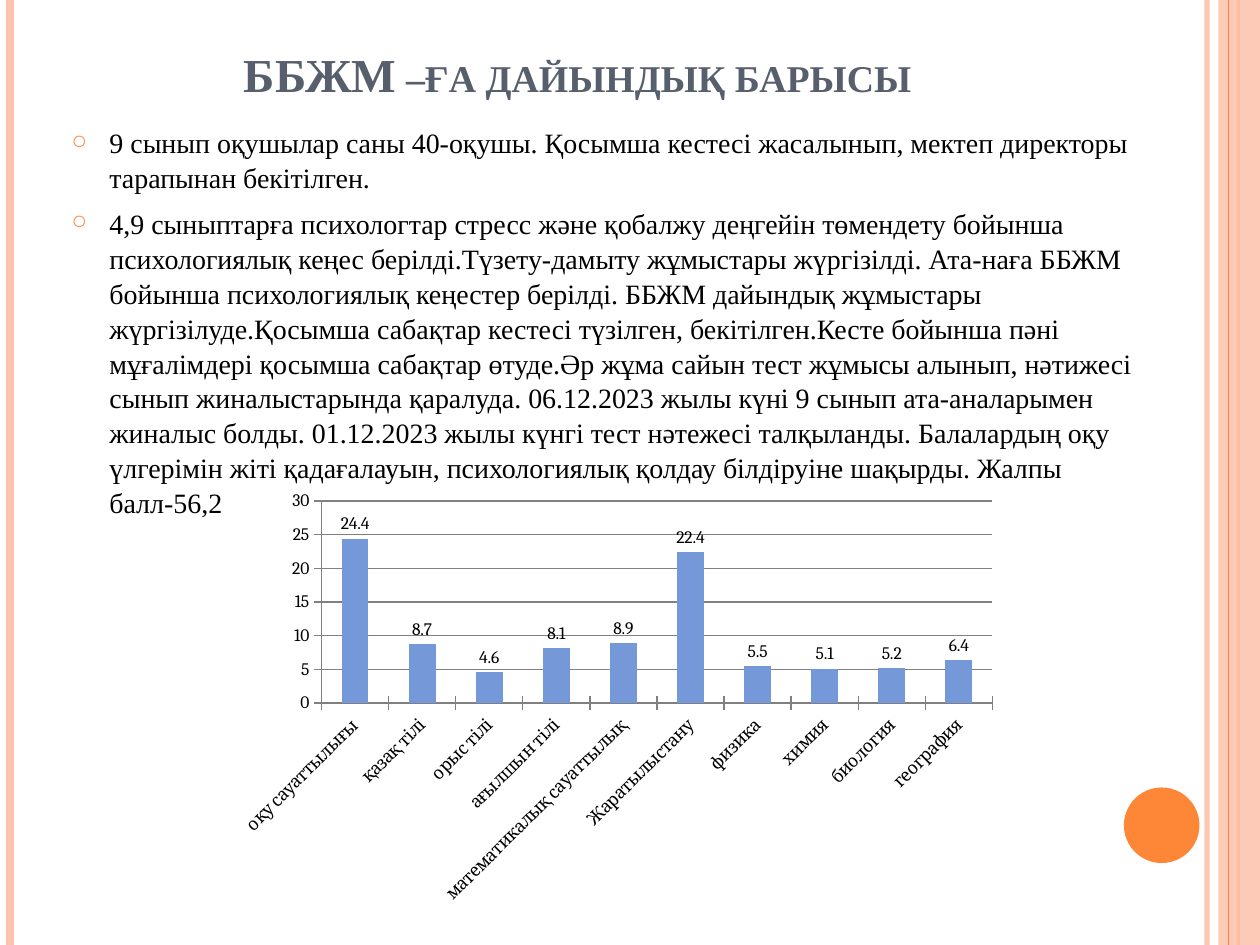
from lxml import etree
from pptx import Presentation
from pptx.chart.data import CategoryChartData
from pptx.dml.color import RGBColor
from pptx.enum import chart as charts, shapes, text
from pptx.oxml.ns import qn
from pptx.util import Inches, Pt

ORANGE, PEACH, SLATE = "FE8637", "FEC3AE", "575F6D"
BLUE, GREY, BLACK = "7598D9", "808080", "000000"
SERIF, CHART_FONT = "Times New Roman", "Cambria"

TITLE = "ББЖМ –ға дайындық барысы"
BULLETS = [
    "9 сынып оқушылар саны 40-оқушы. Қосымша кестесі жасалынып, мектеп директоры "
    "тарапынан бекітілген.",
    "4,9 сыныптарға психологтар стресс және қобалжу деңгейін төмендету бойынша "
    "психологиялық кеңес берілді.Түзету-дамыту жұмыстары жүргізілді. Ата-наға ББЖМ "
    "бойынша психологиялық кеңестер берілді. ББЖМ дайындық жұмыстары "
    "жүргізілуде.Қосымша сабақтар кестесі түзілген, бекітілген.Кесте бойынша пәні "
    "мұғалімдері қосымша сабақтар өтуде.Әр жұма сайын тест жұмысы алынып, нәтижесі "
    "сынып жиналыстарында қаралуда. 06.12.2023 жылы күні 9 сынып ата-аналарымен "
    "жиналыс болды. 01.12.2023 жылы күнгі тест нәтежесі талқыланды. Балалардың оқу "
    "үлгерімін жіті қадағалауын, психологиялық қолдау білдіруіне шақырды. Жалпы "
    "балл-56,2",
]
SCORES = {
    "оқу сауаттылығы": 24.4, "қазақ тілі": 8.7, "орыс тілі": 4.6,
    "ағылшын тілі": 8.1, "математикалық сауаттылық": 8.9, "Жаратылыстану": 22.4,
    "физика": 5.5, "химия": 5.1, "биология": 5.2, "география": 6.4,
}
# Vertical stripes: x, colour, width in points, opacity in percent
BACK_STRIPES = [(9.58, PEACH, 3, 93), (0.08, PEACH, 4.5, 100), (9.83, ORANGE, 1.5, 100)]
FRONT_STRIPES = [(9.75, ORANGE, 0.75, 100)]


def color(value):
    return RGBColor.from_string(value)


def set_opacity(fill_parent, percent):
    color_element = fill_parent.find(".//" + qn("a:srgbClr"))
    etree.SubElement(color_element, qn("a:alpha"), val=str(percent * 1000))


def add_stripes(slide, stripes):
    for x, stripe_color, width, opacity in stripes:
        line = slide.shapes.add_connector(
            shapes.MSO_CONNECTOR.STRAIGHT, Inches(x), 0, Inches(x), Inches(7.5))
        line.line.color.rgb = color(stripe_color)
        line.line.width = Pt(width)
        if opacity < 100:
            set_opacity(line.line._ln, opacity)
        etree.SubElement(line._element.spPr, qn("a:effectLst"))


def add_filled_shape(slide, kind, box, fill):
    shape = slide.shapes.add_shape(kind, *map(Inches, box))
    shape.shadow.inherit = False
    shape.fill.solid()
    shape.fill.fore_color.rgb = color(fill)
    shape.line.fill.background()
    return shape


def add_text_frame(slide, box):
    frame = slide.shapes.add_textbox(*map(Inches, box)).text_frame
    frame.word_wrap = True
    return frame


def add_run(paragraph, words, size, font_color):
    run = paragraph.add_run()
    run.text = words
    run.font.name = SERIF
    run.font.size = Pt(size)
    run.font.color.rgb = color(font_color)
    return run


def add_bullet(paragraph):
    properties = paragraph._p.get_or_add_pPr()
    properties.set("marL", str(Inches(0.3)))
    properties.set("indent", str(-Inches(0.3)))
    bullet_color = etree.SubElement(properties, qn("a:buClr"))
    etree.SubElement(bullet_color, qn("a:srgbClr"), val=ORANGE)
    etree.SubElement(properties, qn("a:buSzPct"), val="70000")
    etree.SubElement(properties, qn("a:buChar"), char="○")


presentation = Presentation()
presentation.slide_width, presentation.slide_height = Inches(10), Inches(7.5)
slide = presentation.slides.add_slide(presentation.slide_layouts[6])

# Frame decoration
add_stripes(slide, BACK_STRIPES)
band = add_filled_shape(slide, shapes.MSO_SHAPE.RECTANGLE, (9.67, 0, 0.33, 7.5), PEACH)
set_opacity(band._element.spPr, 87)
add_stripes(slide, FRONT_STRIPES)
add_filled_shape(slide, shapes.MSO_SHAPE.OVAL, (8.92, 6.25, 0.6, 0.6), ORANGE)

# Title
title_frame = add_text_frame(slide, (0.5, 0.3, 8.17, 0.56))
title_frame.vertical_anchor = text.MSO_ANCHOR.BOTTOM
title = title_frame.paragraphs[0]
title.alignment = text.PP_ALIGN.CENTER
title_run = add_run(title, TITLE, 27, SLATE)
title_run.font.bold = True
title_run.font._element.set("cap", "small")

# Bulleted text
body_frame = add_text_frame(slide, (0.47, 0.94, 8.98, 3.05))
for index, words in enumerate(BULLETS):
    paragraph = body_frame.add_paragraph() if index else body_frame.paragraphs[0]
    paragraph.space_before = Pt(6)
    paragraph.line_spacing = 1.04
    add_bullet(paragraph)
    add_run(paragraph, words, 16, BLACK)

# Score chart
chart_data = CategoryChartData()
chart_data.categories = list(SCORES)
chart_data.add_series("Series 1", list(SCORES.values()))
chart = slide.shapes.add_chart(
    charts.XL_CHART_TYPE.COLUMN_CLUSTERED,
    *map(Inches, (1.8, 3.83, 6.2, 3.41)), chart_data).chart
chart.has_legend = chart.has_title = False
chart.font.name = CHART_FONT
chart.font.size = Pt(10)
chart.font.color.rgb = color(BLACK)

plot = chart.plots[0]
plot.vary_by_categories = False
plot.gap_width = 150
plot.has_data_labels = True
plot.data_labels.show_value = True
plot.data_labels.position = charts.XL_LABEL_POSITION.OUTSIDE_END
bars = plot.series[0].format.fill
bars.solid()
bars.fore_color.rgb = color(BLUE)

value_axis, category_axis = chart.value_axis, chart.category_axis
value_axis.minimum_scale, value_axis.maximum_scale = 0, 30
value_axis.major_unit = 5
value_axis.has_major_gridlines = True
for axis in (value_axis, category_axis):
    axis.major_tick_mark = charts.XL_TICK_MARK.CROSS
    axis.tick_labels.font.size = Pt(10)
for part in (value_axis, category_axis, value_axis.major_gridlines):
    part.format.line.color.rgb = color(GREY)
    part.format.line.width = Pt(0.75)
category_axis._element.txPr.find(qn("a:bodyPr")).set("rot", "-2700000")

presentation.save("out.pptx")
